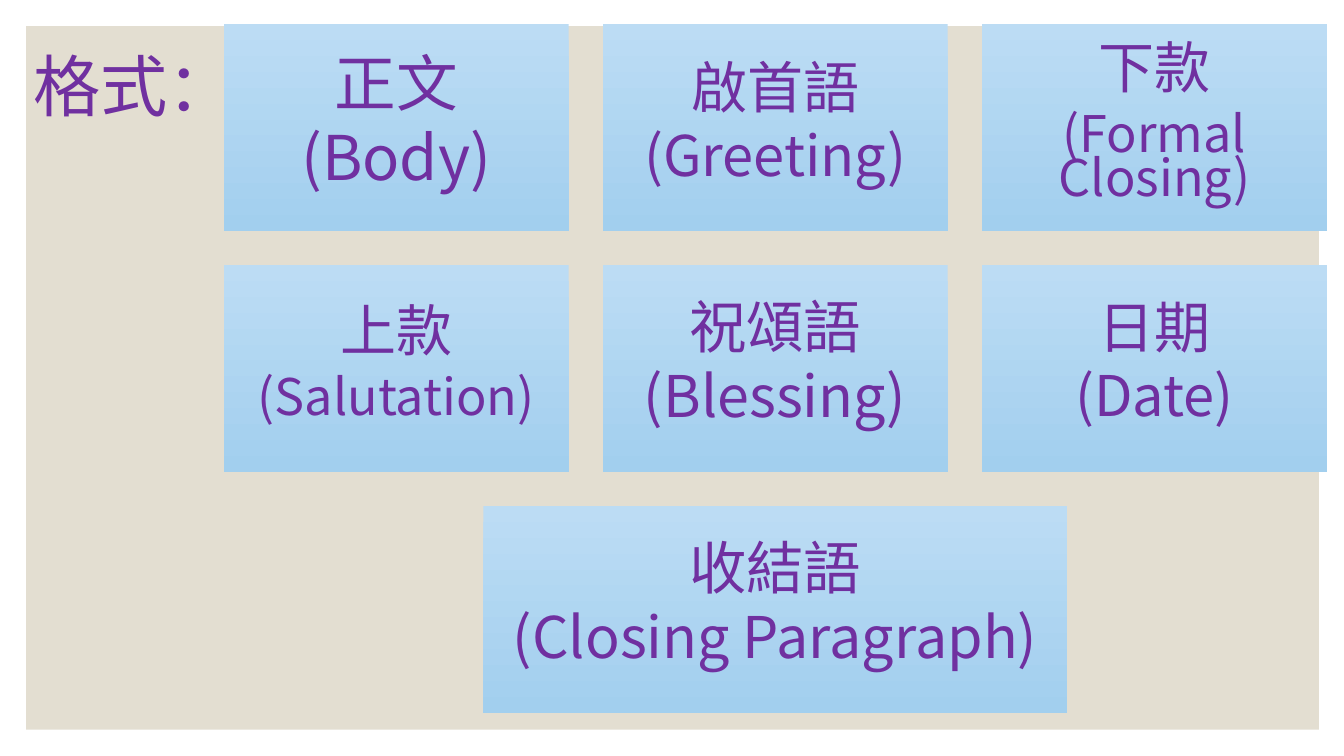
from pptx import Presentation
from pptx.dml.color import RGBColor
from pptx.enum.shapes import MSO_SHAPE
from pptx.enum.text import MSO_ANCHOR, PP_ALIGN
from pptx.oxml.ns import qn
from pptx.util import Inches, Pt
from lxml.etree import SubElement

FONT = "Noto Sans CJK SC"
PURPLE = "7030A0"
SAND = "E3DED1"
SKY = ("BCDCF4", "A2CFEE")

# Card grid: column width, row height and gap
WIDE, HIGH, GAP = 3.42, 2.05, 0.34
LEFT, TOP = 2.22, 0.24

# Chinese term, English term, their sizes
ROWS = [
    [("正文", "(Body)", 44, 44),
     ("啟首語", "(Greeting)", 40, 40),
     ("下款", "(Formal Closing)", 40, 36)],
    [("上款", "(Salutation)", 40, 36),
     ("祝頌語", "(Blessing)", 41, 41),
     ("日期", "(Date)", 40, 40)],
]
LAST = ("收結語", "(Closing Paragraph)", 41, 41)


def color(code):
    return RGBColor.from_string(code)


def style(para, size, space):
    font = para.font
    font.size = Pt(size)
    font.name = FONT
    font.color.rgb = color(PURPLE)
    # East Asian text needs its own typeface entry
    SubElement(font._element, qn("a:ea"), typeface=FONT)
    para.line_spacing = space


def block(slide, left, top, width, height):
    shape = slide.shapes.add_shape(
        MSO_SHAPE.RECTANGLE, Inches(left), Inches(top),
        Inches(width), Inches(height))
    shape.shadow.inherit = False
    shape.line.fill.background()
    return shape


def panel(slide, left, top, width, height):
    shape = block(slide, left, top, width, height)
    shape.fill.solid()
    shape.fill.fore_color.rgb = color(SAND)
    # Keep the panel behind the title
    tree = slide.shapes._spTree
    tree.remove(shape._element)
    tree.insert(2, shape._element)


def heading(slide, left, top, width, height):
    title = slide.shapes.title
    title.left, title.top = Inches(left), Inches(top)
    title.width, title.height = Inches(width), Inches(height)
    frame = title.text_frame
    frame.text = "格式："
    frame.vertical_anchor = MSO_ANCHOR.MIDDLE
    para = frame.paragraphs[0]
    para.alignment = PP_ALIGN.LEFT
    style(para, 48, 0.9)


def card(slide, left, top, width, height, term):
    shape = block(slide, left, top, width, height)

    # Vertical gradient, light to dark
    shape.fill.gradient()
    shape.fill.gradient_angle = 270
    for stop, code in zip(shape.fill.gradient_stops, SKY):
        stop.color.rgb = color(code)

    # Chinese line over English line
    frame = shape.text_frame
    frame.word_wrap = True
    frame.vertical_anchor = MSO_ANCHOR.MIDDLE
    frame.margin_left = frame.margin_right = Inches(0.17)
    frame.margin_top = frame.margin_bottom = Inches(0.17)
    words, sizes = term[:2], term[2:]
    frame.text = "\n".join(words)
    for para, size in zip(frame.paragraphs, sizes):
        para.alignment = PP_ALIGN.CENTER
        para.space_after = Pt(round(0.35 * size))
        style(para, size, 0.72)


def cards(slide, left, top):
    for i, row in enumerate(ROWS):
        for j, term in enumerate(row):
            card(slide, left + j * (WIDE + GAP), top + i * (HIGH + GAP),
                 WIDE, HIGH, term)
    # Wide card centred under the grid
    span, wide = 3 * WIDE + 2 * GAP, 5.79
    card(slide, left + (span - wide) / 2, top + 2 * (HIGH + GAP),
         wide, HIGH, LAST)


def main():
    deck = Presentation()
    deck.slide_width, deck.slide_height = Inches(13.33), Inches(7.5)
    slide = deck.slides.add_slide(deck.slide_layouts[5])
    panel(slide, 0.26, 0.26, 12.82, 6.98)
    heading(slide, 0.23, 0.14, 11, 1.5)
    cards(slide, LEFT, TOP)
    deck.save("out.pptx")


if __name__ == "__main__":
    main()
